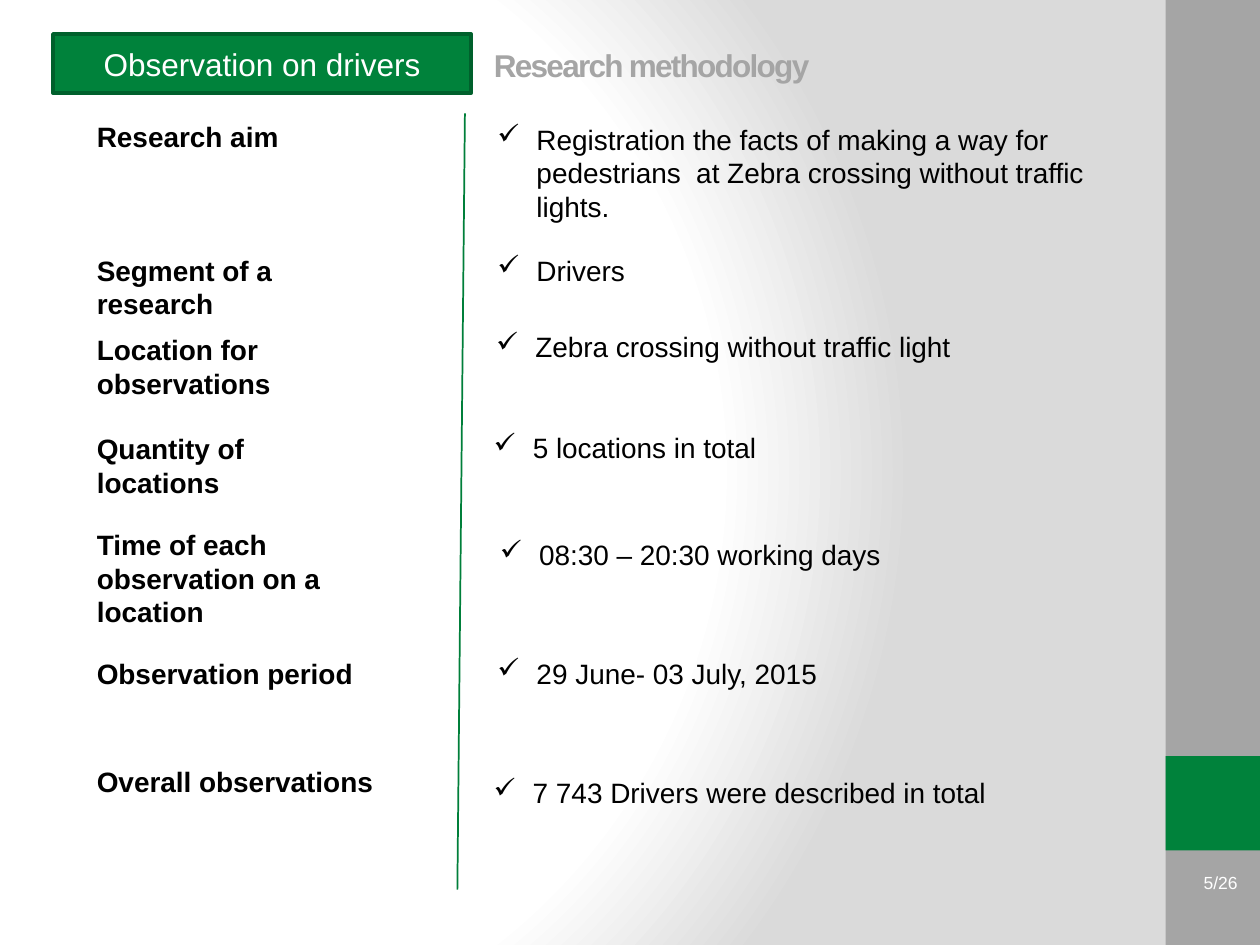
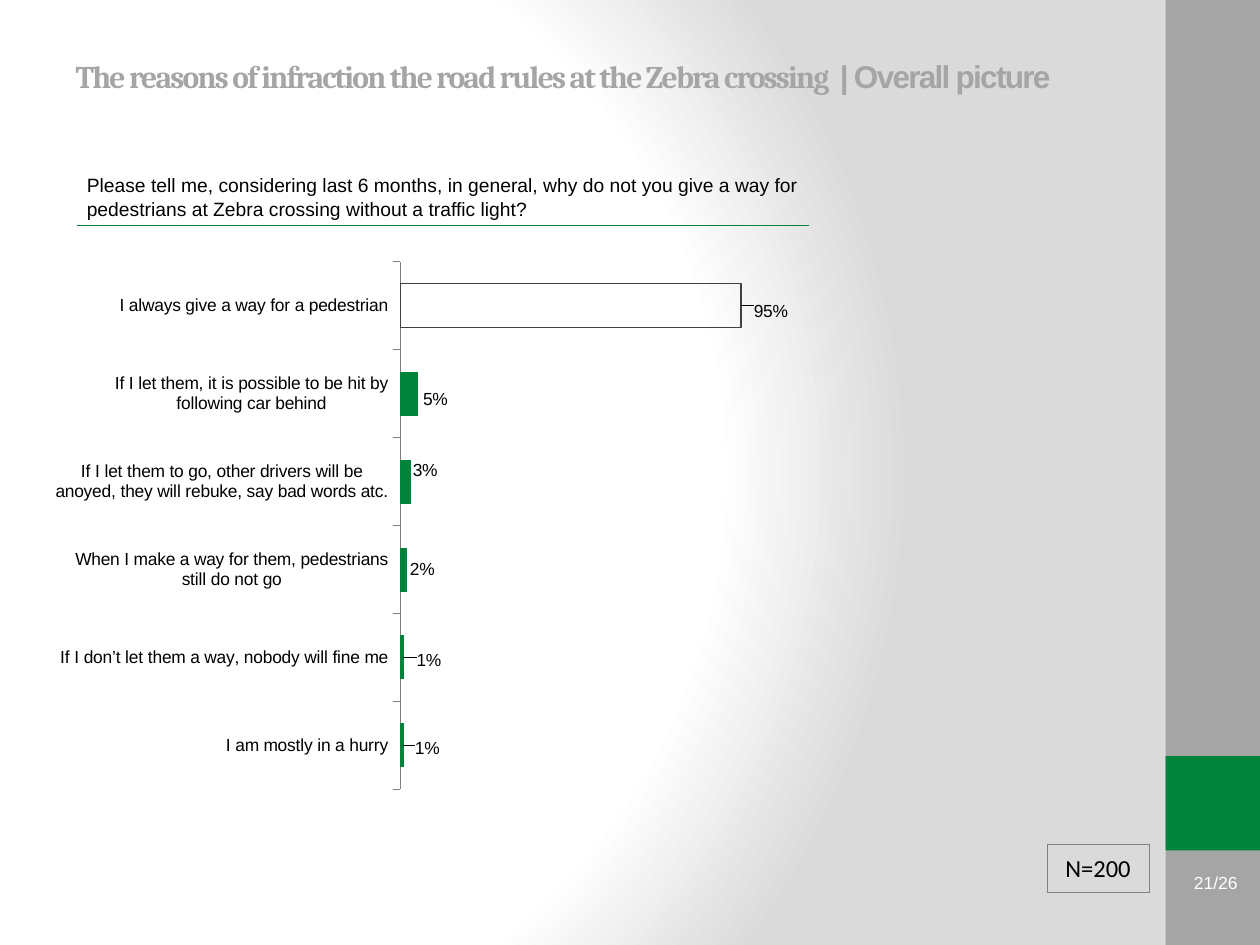
from lxml import etree
from pptx import Presentation
from pptx.chart.data import CategoryChartData
from pptx.dml.color import RGBColor
from pptx.enum.chart import XL_CHART_TYPE, XL_LABEL_POSITION, XL_TICK_MARK
from pptx.enum.shapes import MSO_CONNECTOR, MSO_SHAPE
from pptx.enum.text import MSO_ANCHOR, MSO_AUTO_SIZE, PP_ALIGN
from pptx.oxml import parse_xml
from pptx.oxml.ns import nsdecls, qn
from pptx.util import Inches, Pt

# ---- Content ----
COLORS = {
    "green": "00823B", "green_edge": "00602C", "divider": "007F3A",
    "band": "A5A5A5", "title": "A5A5A5", "fade": "DADADA",
    "axis": "808080", "bar_edge": "404040", "white": "FFFFFF", "black": "000000",
}
PAGE_COUNT = 26

# Label, (top, width), answer, (left, top, width)
METHOD = [
    ("Research aim", (0.9, 2.18),
     "Registration the facts of making a way for pedestrians  at Zebra crossing "
     "without traffic lights.", (3.85, 0.92, 5.1)),
    ("Segment of a research", (1.96, 2.28), "Drivers", (3.85, 1.96, 2.5)),
    ("Location for observations", (2.59, 2.6),
     "Zebra crossing without traffic light", (3.84, 2.57, 4.24)),
    ("Quantity of locations", (3.38, 2.18), "5 locations in total", (3.82, 3.37, 4.52)),
    ("Time of each observation on a location", (4.14, 2.6),
     "08:30 – 20:30 working days", (3.87, 4.22, 3.86)),
    ("Observation period", (5.16, 2.6), "29 June- 03 July, 2015", (3.85, 5.16, 3.86)),
    ("Overall observations", (6.02, 2.99),
     "7 743 Drivers were described in total", (3.82, 6.11, 5.04)),
]

QUESTION = ("Please tell me, considering last 6 months, in general, why do not you give "
            "a way for pedestrians at Zebra crossing without a traffic light?")

# Reason, share, label nudge (fractions of the chart size)
REASONS = [
    ("I always give a way for a pedestrian", 0.95, (0.01, 0.01)),
    ("If I let them, it is possible to be hit by following car behind", 0.05, (0, 0.01)),
    ("If I let them to go, other drivers will be anoyed, they will rebuke, "
     "say bad words atc.", 0.03, (-0.004, -0.02)),
    ("When I make a way for them, pedestrians still do not go", 0.02, (-0.003, 0)),
    ("If I don’t let them a way, nobody will fine me", 0.01, (0.01, 0.005)),
    ("I am mostly in a hurry", 0.01, (0.008, 0.005)),
]
PLOT_AREA = {"x": 0.431, "y": 0.056, "w": 0.456, "h": 0.944}


# ---- Shared helpers ----
def rgb(name):
    return RGBColor.from_string(COLORS[name])


def add_run(paragraph, text, size, color="black", font="Arial", bold=False, spacing=None):
    run = paragraph.add_run()
    run.text = text
    run.font.size, run.font.name, run.font.bold = Pt(size), font, bold
    run.font.color.rgb = rgb(color)
    if spacing is not None:
        run.font._element.set("spc", str(spacing * 100))


def add_text(slide, box, text, size, align=PP_ALIGN.LEFT, anchor=MSO_ANCHOR.TOP,
             check=False, **style):
    frame = slide.shapes.add_textbox(*map(Inches, box)).text_frame
    frame.word_wrap = True
    frame.vertical_anchor = anchor
    paragraph = frame.paragraphs[0]
    paragraph.alignment = align
    if check:
        props = paragraph._p.get_or_add_pPr()
        props.set("marL", str(Inches(0.31)))
        props.set("indent", str(-Inches(0.31)))
        etree.SubElement(props, qn("a:buChar")).set("char", "✓")
    add_run(paragraph, text, size, **style)


def add_box(slide, box, fill=None, edge=None, edge_width=1, text="", **style):
    shape = slide.shapes.add_shape(MSO_SHAPE.RECTANGLE, *map(Inches, box))
    shape.shadow.inherit = False
    if fill:
        shape.fill.solid()
        shape.fill.fore_color.rgb = rgb(fill)
    else:
        shape.fill.background()
    if edge:
        shape.line.color.rgb = rgb(edge)
        shape.line.width = Pt(edge_width)
    else:
        shape.line.fill.background()
    if text:
        shape.text_frame.vertical_anchor = MSO_ANCHOR.MIDDLE
        paragraph = shape.text_frame.paragraphs[0]
        paragraph.alignment = PP_ALIGN.CENTER
        add_run(paragraph, text, **style)


def add_line(slide, start, end, color):
    line = slide.shapes.add_connector(MSO_CONNECTOR.STRAIGHT, *map(Inches, start + end))
    line.line.color.rgb = rgb(color)
    line.line.width = Pt(1)
    etree.SubElement(line._element.spPr, qn("a:effectLst"))


def set_background(master):
    """White spot on the left fading to grey."""
    stops = "".join(
        f'<a:gs pos="{pos * 1000}"><a:srgbClr val="{COLORS[color]}"/></a:gs>'
        for pos, color in ((0, "white"), (75, "white"), (100, "fade")))
    gradient = parse_xml(
        f'<a:gradFill {nsdecls("a")} rotWithShape="1"><a:gsLst>{stops}</a:gsLst>'
        '<a:path path="circle"><a:fillToRect l="20000" t="50000" r="100000" b="50000"/>'
        '</a:path></a:gradFill>')
    master.background.fill.solid()
    solid = master.element.find(".//" + qn("p:bgPr"))[0]
    solid.getparent().replace(solid, gradient)


def new_slide(prs, page, title_box, title_runs):
    slide = prs.slides.add_slide(prs.slide_layouts[5])
    # Side band, green block and page number
    add_box(slide, (9.25, 0, 0.75, 7.5), "band")
    add_box(slide, (9.25, 6, 0.75, 0.75), "green")
    add_text(slide, (9.33, 6.79, 0.59, 0.42), f"{page}/{PAGE_COUNT}", 10,
             PP_ALIGN.RIGHT, MSO_ANCHOR.MIDDLE, color="white")
    # Title
    title = slide.shapes.title
    title.left, title.top, title.width, title.height = map(Inches, title_box)
    frame = title.text_frame
    frame.auto_size = MSO_AUTO_SIZE.NONE
    frame.word_wrap = True
    frame.vertical_anchor = MSO_ANCHOR.MIDDLE
    frame.paragraphs[0].alignment = PP_ALIGN.LEFT
    for text, font in title_runs:
        add_run(frame.paragraphs[0], text, 18, "title", font, True, -1)
    return slide


# ---- Slides ----
def build_methodology(prs):
    slide = new_slide(prs, 5, (3.82, 0.21, 5.12, 0.61), [("Research methodology", "Arial")])
    add_box(slide, (0.42, 0.27, 3.32, 0.47), "green", "green_edge", 2,
            "Observation on drivers", size=18, color="white")
    add_line(slide, (3.69, 0.9), (3.63, 7.06), "divider")
    for label, (top, width), answer, answer_place in METHOD:
        add_text(slide, (0.67, top, width, 0.37), label, 16, bold=True)
        add_text(slide, (*answer_place, 0.37), answer, 16, check=True)


def add_reason_chart(slide):
    data = CategoryChartData(number_format="0%")
    data.categories = [reason for reason, _, _ in REASONS]
    data.add_series("Series 1", [share for _, share, _ in REASONS])
    chart = slide.shapes.add_chart(XL_CHART_TYPE.BAR_CLUSTERED,
                                   *map(Inches, (0.44, 1.83, 6.29, 4.44)), data).chart
    chart.has_legend = chart.has_title = False
    chart.font.name, chart.font.size = "Arial", Pt(12)
    chart.font.color.rgb = rgb("black")

    # Axes
    reasons = chart.category_axis
    reasons.reverse_order = True
    reasons.major_tick_mark = XL_TICK_MARK.OUTSIDE
    reasons.tick_labels.font.size = Pt(10)
    reasons.format.line.color.rgb = rgb("axis")
    shares = chart.value_axis
    shares.minimum_scale, shares.maximum_scale = 0, 1
    shares.has_major_gridlines = False
    shares.visible = False

    # Bars; the first stays hollow
    plot = chart.plots[0]
    plot.gap_width = 100
    plot.vary_by_categories = False
    bars = plot.series[0]
    bars.format.fill.solid()
    bars.format.fill.fore_color.rgb = rgb("green")
    hollow = bars.points[0].format
    hollow.fill.background()
    hollow.line.color.rgb = rgb("bar_edge")
    hollow.line.width = Pt(0.75)

    # Value labels
    labels = bars.data_labels
    labels.show_value = True
    labels.number_format, labels.number_format_is_linked = "0%", False
    labels.font.size = Pt(10)
    for index in range(len(REASONS)):
        label = bars.points[index].data_label
        label.font.size = Pt(10)
        label.position = XL_LABEL_POSITION.OUTSIDE_END
    for element, (_, _, (dx, dy)) in zip(bars._element.iter(qn("c:dLbl")), REASONS):
        element.insert(1, manual_layout({"x": dx, "y": dy}))

    # Plot area
    area = chart._chartSpace.chart.plotArea
    for old in area.findall(qn("c:layout")):
        area.remove(old)
    area.insert(0, manual_layout(PLOT_AREA, inner=True))


def manual_layout(values, inner=False):
    layout = etree.Element(qn("c:layout"))
    manual = etree.SubElement(layout, qn("c:manualLayout"))
    settings = dict(values)
    if inner:
        settings = {"layoutTarget": "inner", "xMode": "edge", "yMode": "edge", **values}
    for tag, value in settings.items():
        etree.SubElement(manual, qn(f"c:{tag}")).set("val", str(value))
    return layout


def build_reasons(prs):
    slide = new_slide(prs, 21, (0.5, 0.3, 8.33, 0.61), [
        ("The reasons of infraction the road rules at the Zebra crossing  ", "Cambria"),
        ("| Overall picture", "Arial")])
    add_text(slide, (0.59, 1.33, 5.98, 0.47), QUESTION, 11)
    add_line(slide, (0.61, 1.79), (6.42, 1.79), "green")
    add_box(slide, (8.31, 6.7, 0.81, 0.38), None, "axis", 0.5,
            "N=200", size=14, font="Calibri")
    add_reason_chart(slide)


def main():
    prs = Presentation()
    prs.slide_width, prs.slide_height = Inches(10), Inches(7.5)
    set_background(prs.slide_master)
    build_methodology(prs)
    build_reasons(prs)
    prs.save("out.pptx")


if __name__ == "__main__":
    main()
